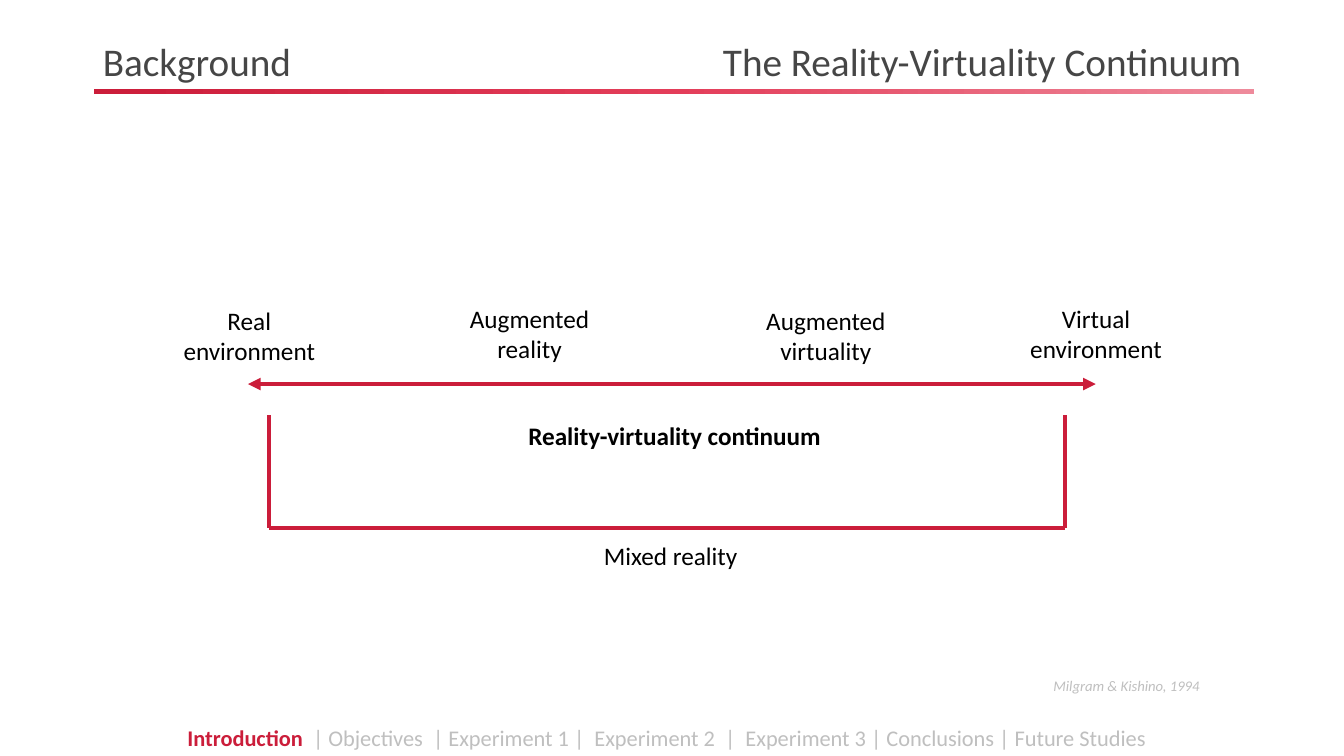
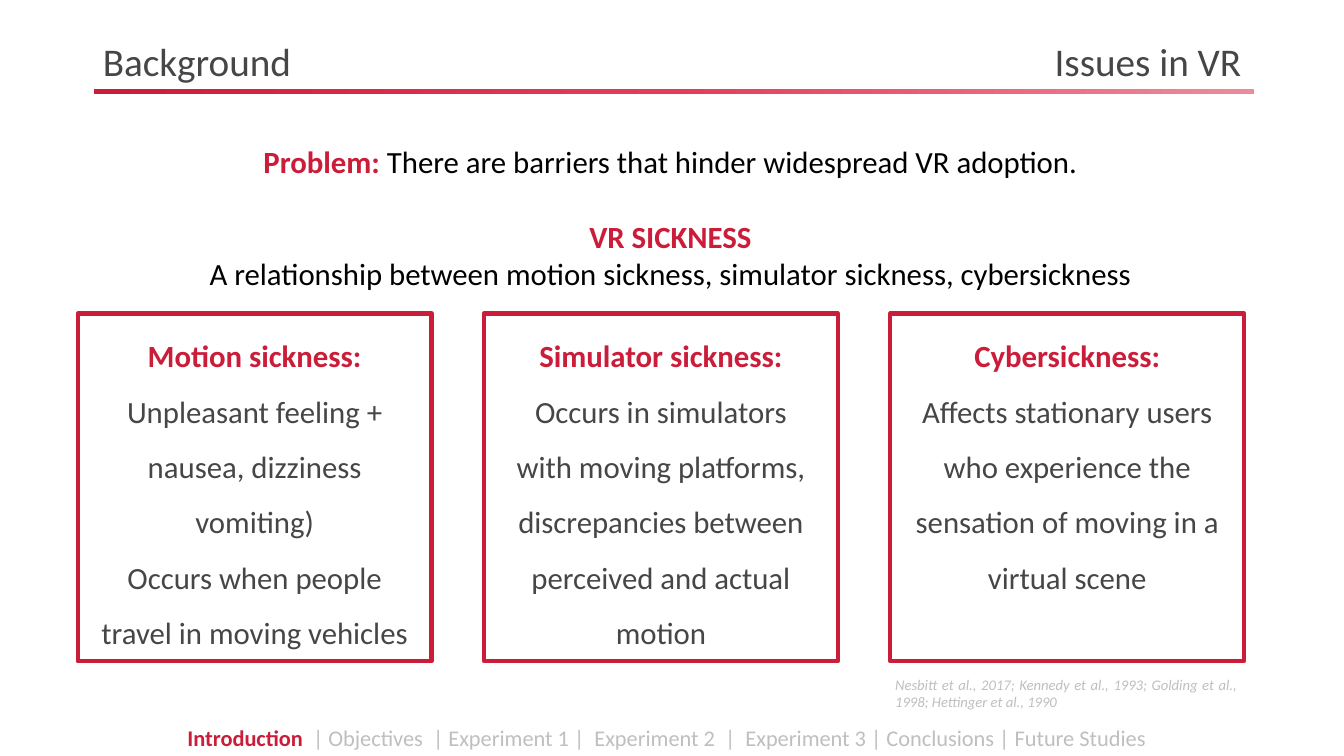
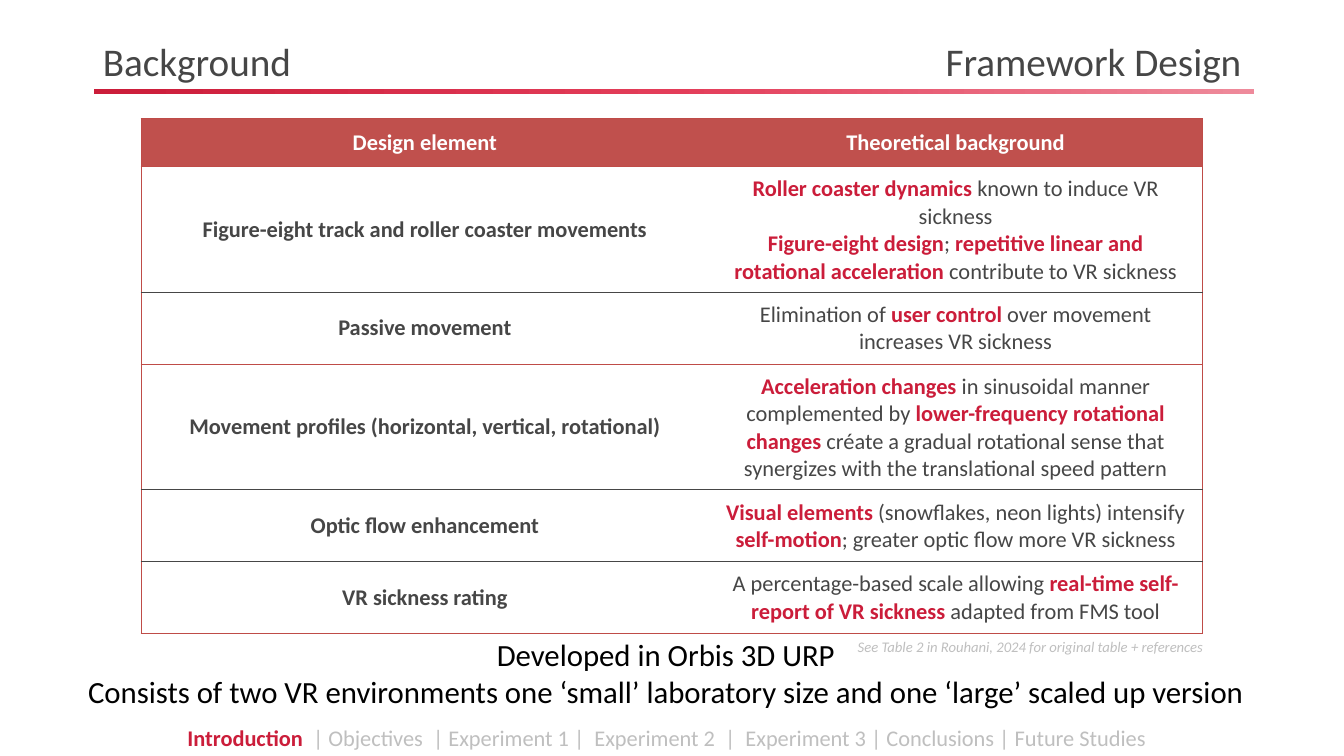
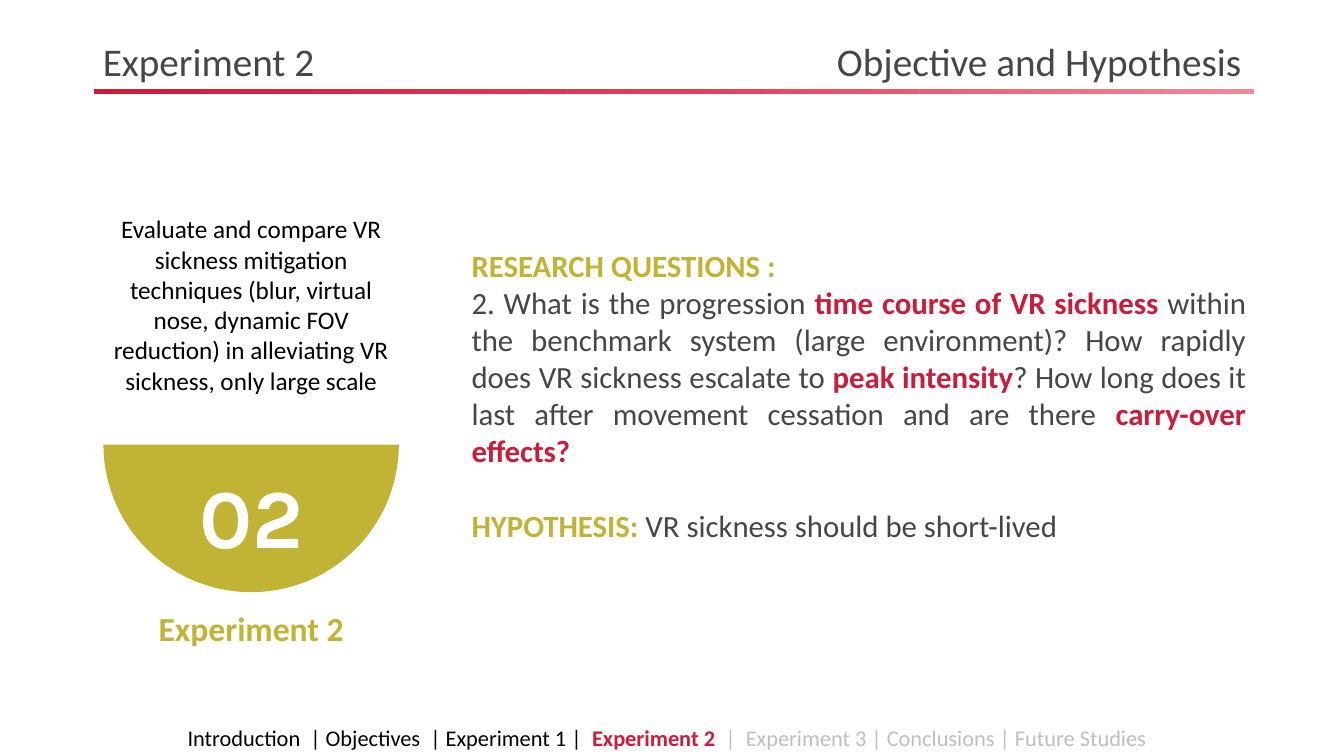
"""Build four slides of a talk on sickness in virtual reality."""
import copy
import math

import lxml.etree
import pptx
import pptx.dml.color
import pptx.enum.shapes
import pptx.enum.text
import pptx.oxml.ns
import pptx.util

COLOURS = {
    "red": "CB1D3A",
    "rose": "E33D59",
    "pink": "EE8A9B",
    "ink": "464646",
    "black": "000000",
    "white": "FFFFFF",
    "pale": "BFBFBF",
    "olive": "C1B434",
    "header": "C0504D",
    "rule": "BF4C48",
}
FONT = "Calibri"
WIDTH, HEIGHT = 13.33, 7.5
TRAIL = ("Introduction  | Objectives  | Experiment 1 |  Experiment 2  |  "
         "Experiment 3 | Conclusions | Future Studies")
BLANK_LINE = 27
ALIGN = pptx.enum.text.PP_ALIGN
ANCHOR = pptx.enum.text.MSO_ANCHOR


def across(percent):
    return pptx.util.Inches(WIDTH * percent / 100)


def down(percent):
    return pptx.util.Inches(HEIGHT * percent / 100)


def place(left, top, width, height):
    return across(left), down(top), across(width), down(height)


def rgb(colour):
    return pptx.dml.color.RGBColor.from_string(COLOURS[colour])


def add_xml(parent, tag, **attributes):
    return lxml.etree.SubElement(parent, pptx.oxml.ns.qn(tag), attributes)


def write(frame, lines, size, colour="black", align=ALIGN.CENTER, font=FONT,
          bold=False, italic=False, spacing=None, gaps=None):
    """Fill a frame; a span is plain text or a (text, colour) pair set in bold."""
    frame.word_wrap = True
    for index, line in enumerate(lines):
        para = frame.paragraphs[0] if index == 0 else frame.add_paragraph()
        para.alignment = align
        if spacing:
            para.line_spacing = spacing
        if gaps and index in gaps:
            para.space_before = pptx.util.Pt(gaps[index])
        for part in [line] if isinstance(line, str) else line:
            words, shade = (part, colour) if isinstance(part, str) else part
            span = para.add_run()
            span.text = words
            span.font.name = font
            span.font.size = pptx.util.Pt(size)
            span.font.bold = bold or not isinstance(part, str)
            span.font.italic = italic
            span.font.color.rgb = rgb(shade)


def add_text(page, area, lines, size, **style):
    box = page.shapes.add_textbox(*place(*area))
    write(box.text_frame, lines, size, **style)


def add_citation(page, area, words):
    add_text(page, area, [words], 10.5, colour="pale", align=ALIGN.JUSTIFY, italic=True)


def add_line(page, start, end, arrows=False):
    line = page.shapes.add_connector(
        pptx.enum.shapes.MSO_CONNECTOR.STRAIGHT,
        across(start[0]), down(start[1]), across(end[0]), down(end[1]))
    line.line.color.rgb = rgb("red")
    line.line.width = pptx.util.Pt(3)
    if arrows:
        for tag in ("a:headEnd", "a:tailEnd"):
            add_xml(line.get_or_add_ln(), tag, type="triangle")
    add_xml(line.element.spPr, "a:effectLst")


def add_card(page, area, heading, lines):
    card = page.shapes.add_shape(pptx.enum.shapes.MSO_SHAPE.RECTANGLE, *place(*area))
    card.shadow.inherit = False
    card.fill.background()
    card.line.color.rgb = rgb("red")
    card.line.width = pptx.util.Pt(3)
    frame = card.text_frame
    frame.vertical_anchor = ANCHOR.TOP
    frame.margin_left = frame.margin_right = across(1.65)
    write(frame, [[(heading, "red")], *lines], 22, colour="ink", spacing=1.5)


def add_half_disc(page, centre, top, radius):
    points = [(across(centre) + across(radius) * math.cos(math.radians(angle)),
               down(top) + across(radius) * math.sin(math.radians(angle)))
              for angle in range(0, 181, 2)]
    outline = page.shapes.build_freeform(*points[0])
    outline.add_line_segments(points[1:], close=True)
    disc = outline.convert_to_shape()
    disc.shadow.inherit = False
    disc.fill.solid()
    disc.fill.fore_color.rgb = rgb("olive")
    disc.line.fill.background()


def set_borders(properties, edges):
    """Give a cell its left, right, top and bottom lines; None leaves one out."""
    for index, (side, colour) in enumerate(zip("LRTB", edges)):
        line = add_xml(properties, "a:ln" + side, w="9525")
        if colour:
            add_xml(add_xml(line, "a:solidFill"), "a:srgbClr", val=COLOURS[colour])
        else:
            add_xml(line, "a:noFill")
        properties.insert(index, line)


def add_design_table(page, corner, columns, heights, rows, rules):
    holder = page.shapes.add_table(
        len(rows), len(columns), *place(*corner, sum(columns), sum(heights)))
    table = holder.table
    table.first_row = table.horz_banding = False
    for column, width in zip(table.columns, columns):
        column.width = across(width)
    for index, (row, height) in enumerate(zip(table.rows, heights)):
        row.height = down(height)
        for side, cell in enumerate(row.cells):
            cell.vertical_anchor = ANCHOR.MIDDLE
            cell.margin_left, cell.margin_right = across(1.28), across(0.98)
            cell.margin_top = cell.margin_bottom = down(1.2)
            if index == 0:
                cell.fill.solid()
                cell.fill.fore_color.rgb = rgb("header")
            else:
                cell.fill.background()
            write(cell.text_frame, rows[index][side], 16,
                  colour="ink" if index else "white", bold=index == 0 or side == 0)
    cells = holder.element.findall(".//" + pptx.oxml.ns.qn("a:tcPr"))
    for index, properties in enumerate(cells):
        row, side = divmod(index, len(columns))
        set_borders(properties, (None if side else "rule", "rule" if side else None,
                                 rules[row], rules[row + 1]))


def prepare_layout(deck):
    """Place the title on the layout all slides use."""
    layout = deck.slide_layouts[5]
    title = layout.placeholders[0]
    title.left, title.top, title.width, title.height = place(7.65, 3.87, 85.8, 8.4)
    return layout


def add_band(layout, page):
    """Draw the gradient band and move it to the layout."""
    band = page.shapes.add_shape(
        pptx.enum.shapes.MSO_SHAPE.RECTANGLE, *place(6.98, 11.73, 86.33, 0.67))
    band.shadow.inherit = False
    band.line.fill.background()
    band.fill.gradient()
    band.fill.gradient_angle = 0
    stops = band.element.find(".//" + pptx.oxml.ns.qn("a:gsLst"))
    stops.append(copy.deepcopy(stops[0]))
    for index, (stop, colour) in enumerate(
            zip(band.fill.gradient_stops, ("red", "rose", "pink"))):
        stop.position = index / 2
        stop.color.rgb = rgb(colour)
    layout.shapes.element.append(band.element)


def add_page(deck, layout, chapter, topic, section):
    page = deck.slides.add_slide(layout)
    title = page.shapes.title
    frame = title.text_frame
    frame.auto_size = pptx.enum.text.MSO_AUTO_SIZE.NONE
    frame.margin_left = 0
    write(frame, [f"{chapter}\t{topic}"], 28, colour="ink", align=ALIGN.LEFT)
    settings = title.element.find(".//" + pptx.oxml.ns.qn("a:pPr"))
    add_xml(add_xml(settings, "a:tabLst"), "a:tab", pos=str(across(84.7)), algn="r")
    before, current, after = TRAIL.partition(section)
    trail = [before, (current, "red")] if before else [(current, "red")]
    box = page.shapes.add_textbox(*place(0, 95.07, 100, 4.93))
    box.text_frame.margin_left = 0
    write(box.text_frame, [[*trail, after]], 16)
    box.text_frame.paragraphs[0].runs[-1].font.color.rgb = rgb("pale")
    return page


def draw_continuum(page):
    left, right, top, bottom = 20.03, 79.22, 54.93, 69.87
    add_line(page, (18.45, 50.8), (81.53, 50.8), arrows=True)
    for start, end in (((left, top), (left, bottom)),
                       ((right, top), (right, bottom)),
                       ((left, bottom), (right, bottom))):
        add_line(page, start, end)
    for centre, label_top, lines in (
            (18.55, 39.73, ["Real", "environment"]),
            (39.4, 39.47, ["Augmented", "reality"]),
            (61.45, 39.73, ["Augmented", "virtuality"]),
            (81.55, 39.47, ["Virtual", "environment"])):
        add_text(page, (centre - 7.5, label_top, 15, 9.5), lines, 18)
    add_text(page, (38.2, top, 24, 5.33), ["Reality-virtuality continuum"], 18, bold=True)
    add_text(page, (42.4, 70.8, 15, 5.33), ["Mixed reality"], 18)
    add_citation(page, (77.64, 88.93, 15.9, 3.73), "Milgram & Kishino, 1994")


def draw_issues(page):
    add_text(page, (6.3, 18.27, 87.17, 22), [
        [("Problem: ", "red"), "There are barriers that hinder widespread VR adoption."],
        [("VR SICKNESS", "red")],
        "A relationship between motion sickness, simulator sickness, cybersickness",
    ], 22, gaps={1: BLANK_LINE})
    cards = (
        ("Motion sickness:", ["Unpleasant feeling + nausea, dizziness vomiting)",
                              "Occurs when people travel in moving vehicles"]),
        ("Simulator sickness:", ["Occurs in simulators with moving platforms, "
                                 "discrepancies between perceived and actual motion"]),
        ("Cybersickness:", ["Affects stationary users who experience the sensation "
                            "of moving in a virtual scene"]),
    )
    for index, (heading, lines) in enumerate(cards):
        add_card(page, (5.78 + 30.23 * index, 41.47, 26.33, 46), heading, lines)
    add_citation(page, (65.87, 88.67, 26.93, 6),
                 "Nesbitt et al., 2017; Kennedy et al., 1993; "
                 "Golding et al., 1998; Hettinger et al., 1990")


def draw_framework(page):
    rows = [
        (["Design element"], ["Theoretical background"]),
        (["Figure-eight track and roller coaster movements"],
         [[("Roller coaster dynamics ", "red"), "known to induce VR sickness"],
          [("Figure-eight design", "red"), "; ",
           ("repetitive linear and rotational acceleration ", "red"),
           "contribute to VR sickness"]]),
        (["Passive movement"],
         [["Elimination of ", ("user control ", "red"),
           "over movement increases VR sickness"]]),
        (["Movement profiles (horizontal, vertical, rotational)"],
         [[("Acceleration changes", "red"), " in sinusoidal manner complemented by ",
           ("lower-frequency rotational changes ", "red"),
           "créate a gradual rotational sense that synergizes with the "
           "translational speed pattern"]]),
        (["Optic flow enhancement"],
         [[("Visual elements ", "red"), "(snowflakes, neon lights) intensify ",
           ("self-motion", "red"), "; greater optic flow more VR sickness"]]),
        (["VR sickness rating"],
         [["A percentage-based scale allowing ",
           ("real-time self-report of VR sickness", "red"),
           " adapted from FMS tool"]]),
    ]
    add_design_table(page, (10.5, 15.73), (41.93, 37.05),
                     (6.3, 16.6, 9.45, 16.6, 9.45, 9.45), rows,
                     ("rule", "rule", "ink", "rule", "ink", "ink", "rule"))
    add_text(page, (5.63, 83.47, 87.83, 11.2), [
        "Developed in Orbis 3D URP",
        "Consists of two VR environments one ‘small’ laboratory size "
        "and one ‘large’ scaled up version",
    ], 22)
    add_citation(page, (63.08, 83.73, 27.6, 3.73),
                 "See Table 2 in Rouhani, 2024 for original table + references")


def draw_hypothesis(page):
    left, width = 7.7, 21.98
    centre = left + width / 2
    add_text(page, (left, 27.6, width, 29.6), [
        "Evaluate and compare VR sickness mitigation techniques (blur, virtual nose, "
        "dynamic FOV reduction) in alleviating VR sickness, only large scale"], 18)
    add_half_disc(page, centre, 58.8, width / 2)
    add_text(page, (centre - 6, 60.8, 12, 14.8), ["02"], 60,
             colour="white", font="Karla", bold=True)
    add_text(page, (left, 79.73, width, 6.67), [[("Experiment 2", "olive")]], 24)
    add_text(page, (34.35, 32, 59.1, 40.8), [
        [("RESEARCH QUESTIONS :", "olive")],
        ["2. What is the progression ", ("time course of VR sickness ", "red"),
         "within the benchmark system (large environment)? "
         "How rapidly does VR sickness escalate to ", ("peak intensity", "red"),
         "? How long does it last after movement cessation and are there ",
         ("carry-over effects?", "red")],
        [("HYPOTHESIS: ", "olive"), "VR sickness should be short-lived"],
    ], 22, colour="ink", align=ALIGN.JUSTIFY, gaps={2: BLANK_LINE})


def main():
    deck = pptx.Presentation()
    deck.slide_width, deck.slide_height = across(100), down(100)
    layout = prepare_layout(deck)
    for chapter, topic, section, draw in (
            ("Background", "The Reality-Virtuality Continuum", "Introduction", draw_continuum),
            ("Background", "Issues in VR", "Introduction", draw_issues),
            ("Background", "Framework Design", "Introduction", draw_framework),
            ("Experiment 2", "Objective and Hypothesis", "Experiment 2", draw_hypothesis)):
        page = add_page(deck, layout, chapter, topic, section)
        draw(page)
    add_band(layout, deck.slides[0])
    deck.save("out.pptx")


if __name__ == "__main__":
    main()
